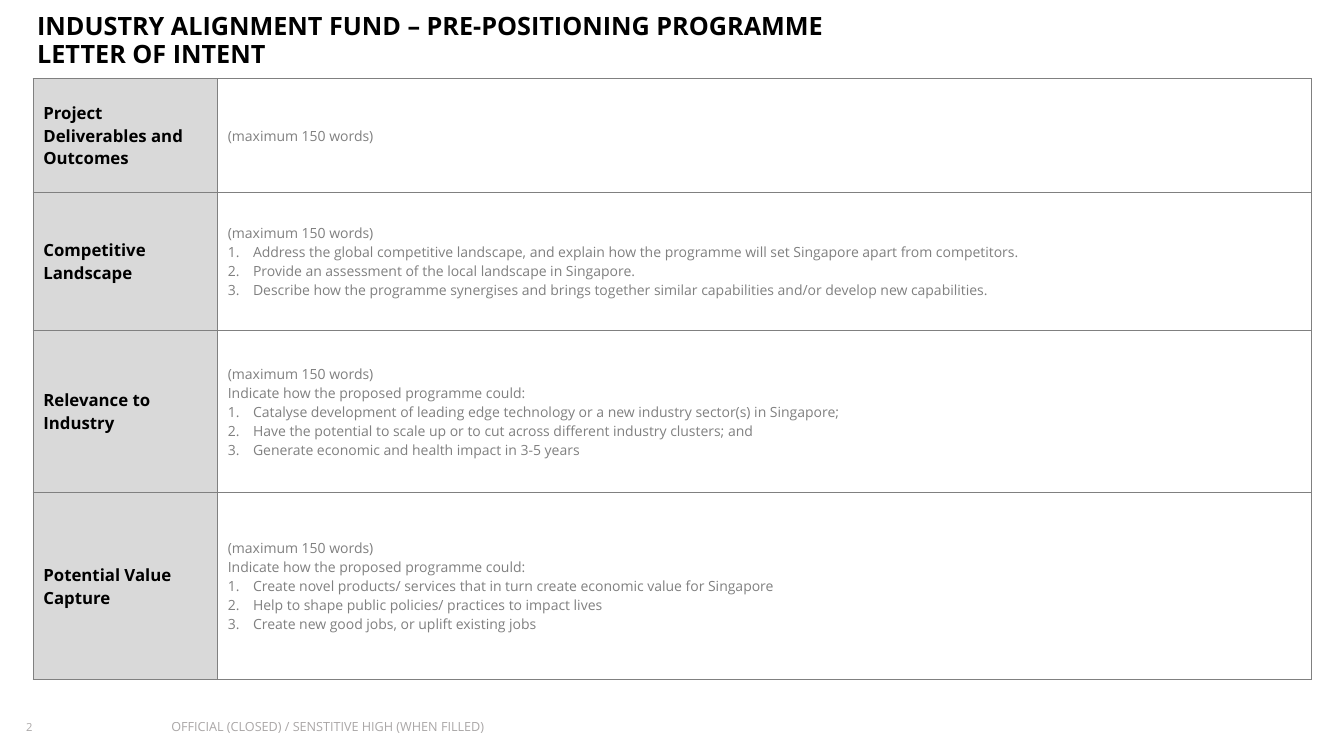
from lxml.etree import SubElement
from pptx import Presentation
from pptx.dml.color import RGBColor
from pptx.enum.text import MSO_ANCHOR
from pptx.oxml.ns import qn
from pptx.util import Inches, Pt

FONT = "Open Sans"
GREY = "808080"
LIMIT = "(maximum 150 words)"
LEAD = "Indicate how the proposed programme could:"
SECTIONS = [
    ("Project Deliverables and Outcomes", 1.13, [LIMIT], []),
    ("Competitive Landscape", 1.37, [LIMIT], [
        "Address the global competitive landscape, and explain how the programme "
        "will set Singapore apart from competitors.",
        "Provide an assessment of the local landscape in Singapore.",
        "Describe how the programme synergises and brings together similar "
        "capabilities and/or develop new capabilities.",
    ]),
    ("Relevance to Industry", 1.61, [LIMIT, LEAD], [
        "Catalyse development of leading edge technology or a new industry sector(s) in Singapore;",
        "Have the potential to scale up or to cut across different industry clusters; and",
        "Generate economic and health impact in 3-5 years",
    ]),
    ("Potential Value Capture", 1.85, [LIMIT, LEAD], [
        "Create novel products/ services that in turn create economic value for Singapore",
        "Help to shape public policies/ practices to impact lives",
        "Create new good jobs, or uplift existing jobs",
    ]),
]


def rgb(value):
    """Turn a hex string into a colour."""
    return RGBColor.from_string(value)


def style_runs(paragraph, size, color, bold=False, alpha=None):
    """Format every run of a paragraph."""
    for run in paragraph.runs:
        run.font.name = FONT
        run.font.size = Pt(size)
        run.font.bold = bold
        run.font.color.rgb = rgb(color)
        if alpha:
            tint = run.font.fill._xPr.find(".//" + qn("a:srgbClr"))
            SubElement(tint, qn("a:alpha"), val=str(alpha * 1000))


def add_text(slide, box, text, inset=None):
    """Place a wrapped text box and return its paragraph."""
    frame = slide.shapes.add_textbox(*map(Inches, box)).text_frame
    frame.word_wrap = True
    if inset is not None:
        frame.margin_left = frame.margin_right = Inches(inset)
        frame.margin_top = frame.margin_bottom = Inches(inset)
    frame.text = text
    return frame.paragraphs[0]


def add_title(slide, box):
    """Place the two-line heading."""
    heading = add_text(
        slide, box, "INDUSTRY ALIGNMENT FUND – PRE-POSITIONING PROGRAMME\vLETTER OF INTENT")
    heading.line_spacing = 0.9
    style_runs(heading, 18, "000000", bold=True)


def add_footer(slide, left, top, height):
    """Place the page number and the classification marking."""
    number = add_text(slide, (left, top, 0.79, height), "2", 0)
    number.line_spacing = 1.1
    style_runs(number, 8, "767171", alpha=61)
    marking = add_text(slide, (left + 1.44, top, 5.33, height),
                       "OFFICIAL (CLOSED) / SENSTITIVE HIGH (WHEN FILLED)", 0)
    style_runs(marking, 9, "767171", alpha=61)


def draw_borders(cell):
    """Outline all four sides of a cell."""
    properties = cell._tc.get_or_add_tcPr()
    for side in ("lnL", "lnR", "lnT", "lnB"):
        line = SubElement(properties, qn("a:" + side), w=str(Pt(1)))
        SubElement(SubElement(line, qn("a:solidFill")), qn("a:srgbClr"), val=GREY)


def fill_cell(cell, lines, size, color, bold=False, points=()):
    """Write plain lines, then numbered points, into a cell."""
    draw_borders(cell)
    cell.vertical_anchor = MSO_ANCHOR.MIDDLE
    cell.text_frame.text = "\n".join([*lines, *points])
    for index, paragraph in enumerate(cell.text_frame.paragraphs):
        if index >= len(lines):
            properties = paragraph._p.get_or_add_pPr()
            properties.set("marL", str(Inches(0.25)))
            properties.set("indent", str(-Inches(0.25)))
            SubElement(properties, qn("a:buFont"), typeface="+mj-lt")
            SubElement(properties, qn("a:buAutoNum"), type="arabicPeriod")
        style_runs(paragraph, size, color, bold)


def add_sections(slide, box):
    """Place the table of proposal sections."""
    table = slide.shapes.add_table(len(SECTIONS), 2, *map(Inches, box)).table
    table.first_row = table.horz_banding = False
    label_width = 1.83
    table.columns[0].width = Inches(label_width)
    table.columns[1].width = Inches(box[2] - label_width)
    for row, (name, height, lines, points) in enumerate(SECTIONS):
        table.rows[row].height = Inches(height)
        label, guidance = table.cell(row, 0), table.cell(row, 1)
        fill_cell(label, [name], 12, "000000", bold=True)
        label.fill.solid()
        label.fill.fore_color.rgb = rgb("D9D9D9")
        fill_cell(guidance, lines, 10, GREY, points=points)
        guidance.fill.background()


def main():
    """Build and save the slide."""
    deck = Presentation()
    deck.slide_width, deck.slide_height = Inches(13.33), Inches(7.5)
    slide = deck.slides.add_slide(deck.slide_layouts[6])
    add_title(slide, (0.27, 0.09, 11.02, 0.52))
    add_sections(slide, (0.33, 0.78, 12.68, 5.97))
    add_footer(slide, 0.26, 7.13, 0.19)
    deck.save("out.pptx")


if __name__ == "__main__":
    main()
